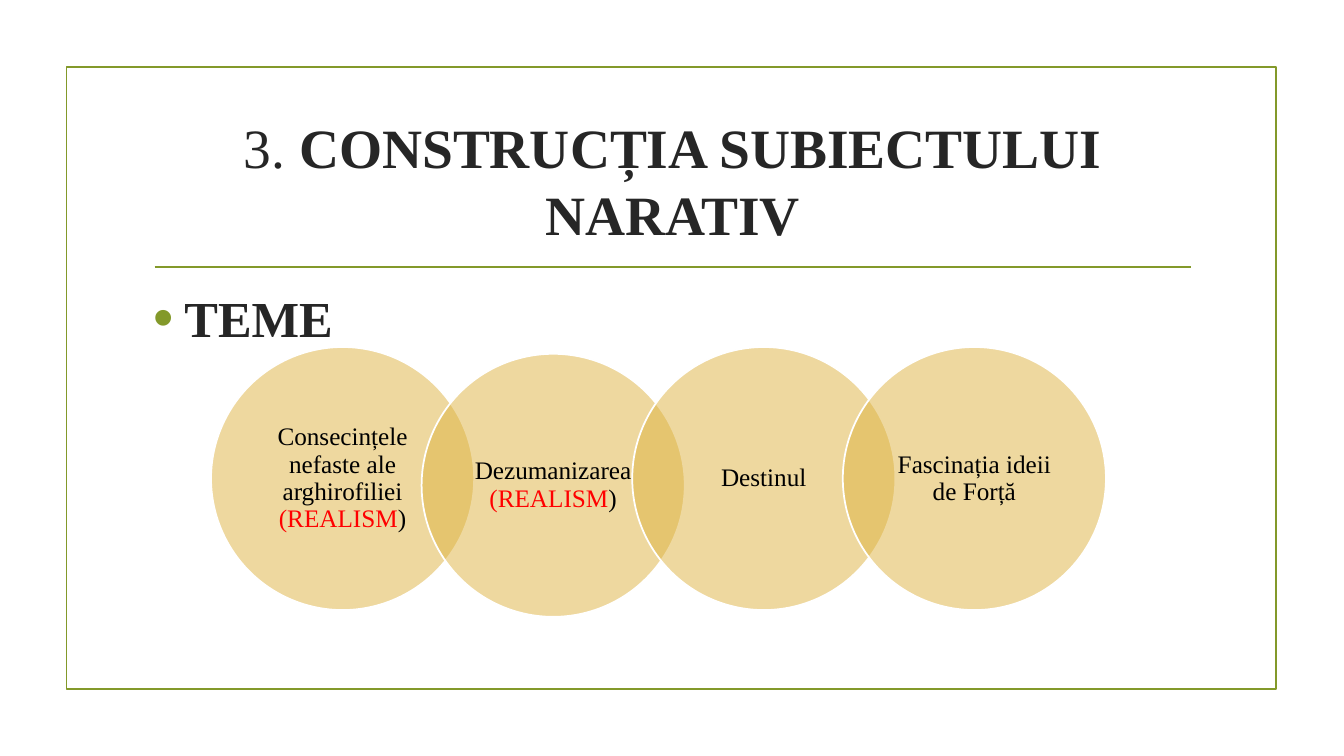
from lxml.etree import SubElement
from pptx import Presentation
from pptx.dml.color import RGBColor
from pptx.enum.shapes import MSO_CONNECTOR as Connector, MSO_SHAPE as Shape
from pptx.enum.text import MSO_ANCHOR as Anchor, MSO_AUTO_SIZE as AutoSize, PP_ALIGN as Align
from pptx.oxml.ns import qn
from pptx.util import Inches, Pt

WIDTH, HEIGHT = Inches(13.33), Inches(7.5)
FONT = "Times New Roman"
GREEN, GOLD, INK, BLACK, RED, WHITE = "83992A", "DEB340", "262626", "000000", "FF0000", "FFFFFF"
DIAMETER = Inches(2.61)
FIRST_LEFT, STEP = 0.157, 0.1567
THEMES = [
    (0.459, [("Consecințele nefaste ale arghirofiliei ", BLACK), ("(REALISM", RED), (")", BLACK)]),
    (0.468, [("Dezumanizarea", BLACK), (" (REALISM", RED), (")", BLACK)]),
    (0.459, [("Destinul", BLACK)]),
    (0.459, [("Fascinația ideii de Forță", BLACK)]),
]


def color(value):
    """Turn a hex string into a colour."""
    return RGBColor.from_string(value)


def across(share):
    """Give a share of the slide's width."""
    return round(WIDTH * share)


def down(share):
    """Give a share of the slide's height."""
    return round(HEIGHT * share)


def outline(item, value):
    """Draw the common thin line in one colour."""
    item.line.color.rgb = color(value)
    item.line.width = Pt(1.25)


def write(paragraph, pieces, size):
    """Add runs of (text, colour, bold) to a paragraph."""
    for text, ink, *bold in pieces:
        run = paragraph.add_run()
        run.text = text
        run.font.name, run.font.size = FONT, Pt(size)
        run.font.bold = bool(bold and bold[0])
        run.font.color.rgb = color(ink)


def place(holder, left, top, width, height):
    """Move a placeholder and stop its text from shrinking."""
    holder.left, holder.top = across(left), down(top)
    holder.width, holder.height = across(width), down(height)
    holder.text_frame.auto_size = AutoSize.NONE


def add_frame(slide):
    """Draw the green border and the rule under the title."""
    border = slide.shapes.add_shape(Shape.RECTANGLE, across(0.0495), down(0.089), across(0.9), down(0.823))
    border.shadow.inherit = False
    border.fill.background()
    outline(border, GREEN)
    rule = slide.shapes.add_connector(Connector.STRAIGHT, across(0.115), down(0.353), across(0.886), down(0.353))
    SubElement(rule._element.spPr, qn("a:effectLst"))
    outline(rule, GREEN)


def add_title(slide):
    """Fill the title placeholder."""
    title = slide.shapes.title
    place(title, 0.1065, 0.143, 0.788, 0.19)
    title.text_frame.vertical_anchor = Anchor.MIDDLE
    heading = title.text_frame.paragraphs[0]
    heading.alignment = Align.CENTER
    write(heading, [("3. ", INK), ("CONSTRUCȚIA SUBIECTULUI NARATIV", INK, True)], 39.6)


def add_bullet(paragraph):
    """Give a paragraph a large green bullet with a hanging indent."""
    properties = paragraph._p.get_or_add_pPr()
    properties.set("marL", str(Inches(0.31)))
    properties.set("indent", str(-Inches(0.31)))
    SubElement(SubElement(properties, qn("a:buClr")), qn("a:srgbClr"), val=GREEN)
    SubElement(properties, qn("a:buSzPct"), val="115000")
    SubElement(properties, qn("a:buFont"), typeface="Arial")
    SubElement(properties, qn("a:buChar"), char="•")


def add_topic(slide):
    """Fill the body placeholder with its single bullet."""
    body = slide.placeholders[1]
    place(body, 0.1065, 0.373, 0.788, 0.484)
    topic = body.text_frame.paragraphs[0]
    add_bullet(topic)
    topic.space_before, topic.space_after = Pt(0), Pt(6)
    write(topic, [("TEME", INK, True)], 36)


def add_theme(slide, left, top, pieces):
    """Draw a translucent circle with its theme inside."""
    circle = slide.shapes.add_shape(Shape.OVAL, across(left), down(top), DIAMETER, DIAMETER)
    circle.shadow.inherit = False
    circle.fill.solid()
    circle.fill.fore_color.rgb = color(GOLD)
    SubElement(circle._element.spPr.find(".//" + qn("a:srgbClr")), qn("a:alpha"), val="50000")
    outline(circle, WHITE)
    frame = circle.text_frame
    frame.word_wrap = True
    frame.vertical_anchor = Anchor.MIDDLE
    frame.margin_left = frame.margin_right = Inches(0.14)
    frame.margin_top = frame.margin_bottom = Inches(0.03)
    theme = frame.paragraphs[0]
    theme.alignment = Align.CENTER
    theme.line_spacing = 0.9
    write(theme, pieces, 18)


def main():
    """Build the slide and save it."""
    deck = Presentation()
    deck.slide_width, deck.slide_height = WIDTH, HEIGHT
    slide = deck.slides.add_slide(deck.slide_layouts[1])
    add_frame(slide)
    add_title(slide)
    add_topic(slide)
    for column, (top, pieces) in enumerate(THEMES):
        add_theme(slide, FIRST_LEFT + column * STEP, top, pieces)
    deck.save("out.pptx")


if __name__ == "__main__":
    main()
